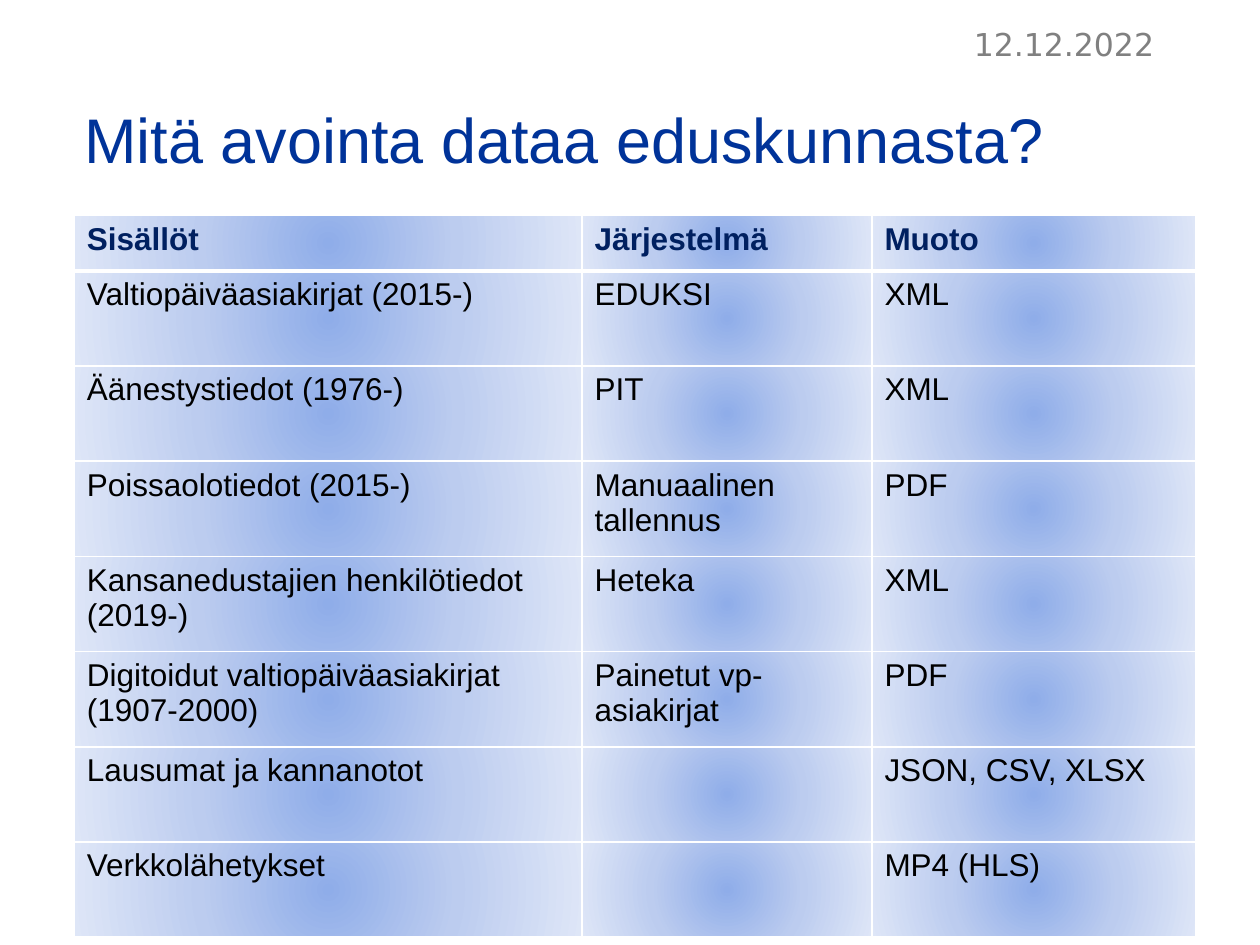
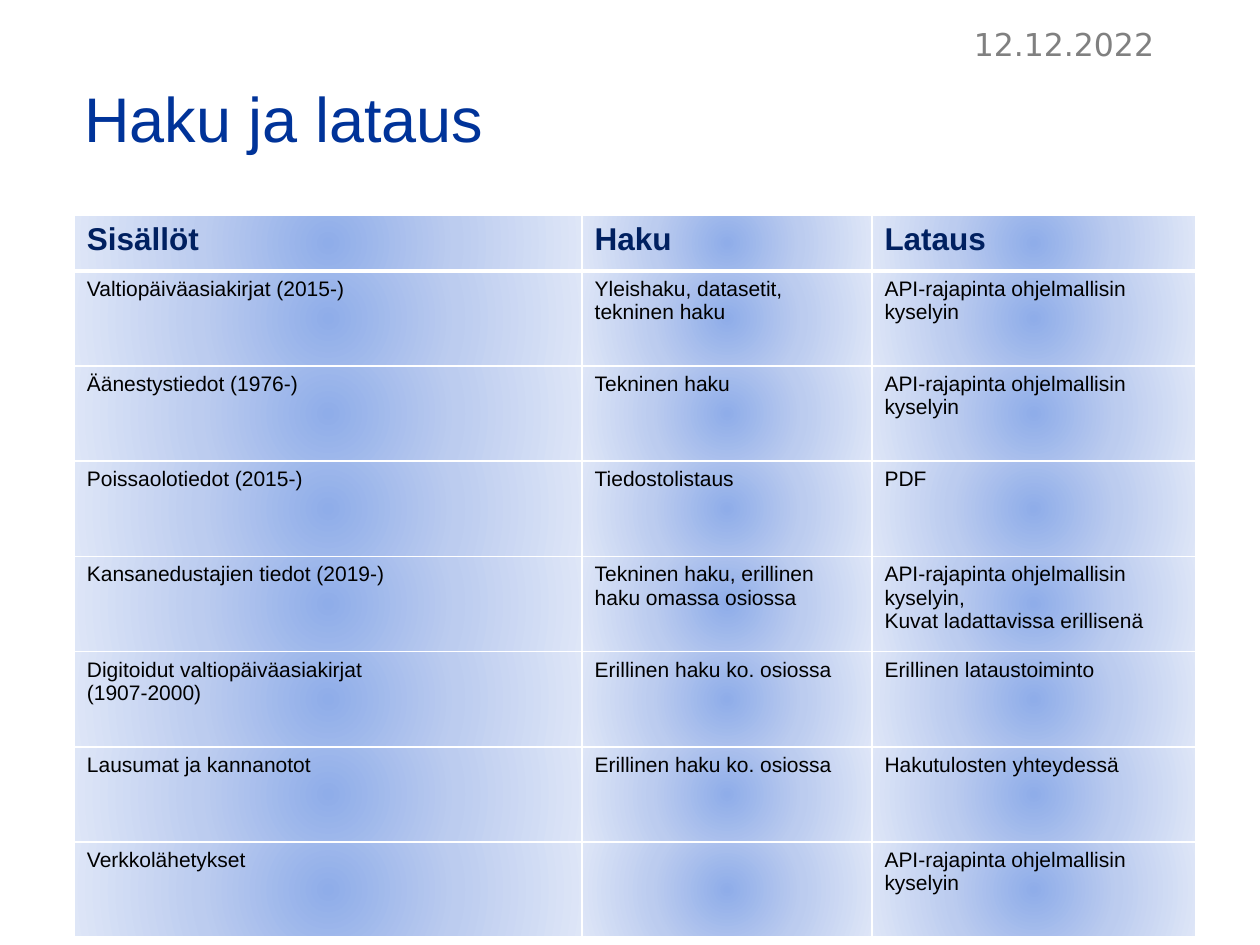
import pptx
import pptx.dml.color
import pptx.enum.text
import pptx.oxml
import pptx.oxml.ns
import pptx.util

Inches = pptx.util.Inches
Pt = pptx.util.Pt
RGBColor = pptx.dml.color.RGBColor
PP_ALIGN = pptx.enum.text.PP_ALIGN
qn = pptx.oxml.ns.qn

TITLE_BLUE = RGBColor(0x00, 0x33, 0x99)
HEADER_NAVY = RGBColor(0x00, 0x20, 0x60)
BODY_BLACK = RGBColor(0x00, 0x00, 0x00)
DATE_GRAY = RGBColor(0x80, 0x80, 0x80)
BORDER_WHITE = RGBColor(0xFF, 0xFF, 0xFF)
GRADIENT_STOPS = [
    (0, RGBColor(0x8F, 0xAD, 0xE9)),
    (50, RGBColor(0xBC, 0xCC, 0xEF)),
    (100, RGBColor(0xDE, 0xE6, 0xF7)),
]

DATE = "12.12.2022"
PLAIN_TABLE_STYLE = "{2D5ABB26-0587-4C30-8999-92F81FD0307C}"
COLUMN_WIDTHS = [4.03, 2.3, 2.57]
TABLE_HEIGHT = 5.73
HEADER_HEIGHT = 0.44
API_QUERY = "API-rajapinta ohjelmallisin kyselyin"

# Title, title height, body text size, table rows
SLIDES = [
    ("Mitä avointa dataa eduskunnasta?", 0.82, 18, [
        ("Sisällöt", "Järjestelmä", "Muoto"),
        ("Valtiopäiväasiakirjat (2015-)", "EDUKSI", "XML"),
        ("Äänestystiedot (1976-)", "PIT", "XML"),
        ("Poissaolotiedot (2015-)", "Manuaalinen tallennus", "PDF"),
        ("Kansanedustajien henkilötiedot (2019-)", "Heteka", "XML"),
        ("Digitoidut valtiopäiväasiakirjat\n(1907-2000)", "Painetut vp-asiakirjat", "PDF"),
        ("Lausumat ja kannanotot", "", "JSON, CSV, XLSX"),
        ("Verkkolähetykset", "", "MP4 (HLS)"),
    ]),
    ("Haku ja lataus", 0.65, 12, [
        ("Sisällöt", "Haku", "Lataus"),
        ("Valtiopäiväasiakirjat (2015-)", "Yleishaku, datasetit, tekninen haku", API_QUERY),
        ("Äänestystiedot (1976-)", "Tekninen haku", API_QUERY),
        ("Poissaolotiedot (2015-)", "Tiedostolistaus", "PDF"),
        ("Kansanedustajien tiedot (2019-)", "Tekninen haku, erillinen haku omassa osiossa",
         API_QUERY + ",\nKuvat ladattavissa erillisenä"),
        ("Digitoidut valtiopäiväasiakirjat\n(1907-2000)", "Erillinen haku ko. osiossa",
         "Erillinen lataustoiminto"),
        ("Lausumat ja kannanotot", "Erillinen haku ko. osiossa", "Hakutulosten yhteydessä"),
        ("Verkkolähetykset", "", API_QUERY),
    ]),
]


def add_text(slide, text, left, top, width, height, font_name, size, color, alignment):
    """Add a bottom-anchored text box without insets."""
    box = slide.shapes.add_textbox(Inches(left), Inches(top), Inches(width), Inches(height))
    frame = box.text_frame
    frame.word_wrap = True
    frame.vertical_anchor = pptx.enum.text.MSO_ANCHOR.BOTTOM
    frame.margin_left = frame.margin_top = frame.margin_right = frame.margin_bottom = 0
    paragraph = frame.paragraphs[0]
    paragraph.text = text
    paragraph.alignment = alignment
    paragraph.font.name = font_name
    paragraph.font.size = Pt(size)
    paragraph.font.color.rgb = color


def style_cell(cell, top_width, bottom_width):
    """Give a cell white borders and a radial gradient fill."""
    properties = cell._tc.get_or_add_tcPr()
    namespace = pptx.oxml.ns.nsdecls("a")
    for side, width in (("L", 1), ("R", 1), ("T", top_width), ("B", bottom_width)):
        properties.append(pptx.oxml.parse_xml(
            f'<a:ln{side} {namespace} w="{Pt(width)}"><a:solidFill>'
            f'<a:srgbClr val="{BORDER_WHITE}"/></a:solidFill></a:ln{side}>'))
    stops = "".join(
        f'<a:gs pos="{position * 1000}"><a:srgbClr val="{color}"/></a:gs>'
        for position, color in GRADIENT_STOPS)
    properties.append(pptx.oxml.parse_xml(
        f'<a:gradFill {namespace} rotWithShape="1"><a:gsLst>{stops}</a:gsLst>'
        '<a:path path="circle"><a:fillToRect l="50000" t="50000" r="50000" b="50000"/>'
        '</a:path></a:gradFill>'))


presentation = pptx.Presentation()
presentation.slide_width = Inches(10)
presentation.slide_height = Inches(7.5)

for title, title_height, body_size, rows in SLIDES:
    slide = presentation.slides.add_slide(presentation.slide_layouts[6])
    add_text(slide, DATE, 7.08, 0, 2.08, 0.5, "DejaVu Sans", 18, DATE_GRAY, PP_ALIGN.RIGHT)
    add_text(slide, title, 0.67, 0.58, 8.5, title_height, "Arial", 36, TITLE_BLUE, PP_ALIGN.LEFT)

    table = slide.shapes.add_table(
        len(rows), len(COLUMN_WIDTHS), Inches(0.59), Inches(1.71),
        Inches(sum(COLUMN_WIDTHS)), Inches(TABLE_HEIGHT)).table
    table.horz_banding = False
    table._tbl.tblPr.find(qn("a:tableStyleId")).text = PLAIN_TABLE_STYLE
    for column, width in zip(table.columns, COLUMN_WIDTHS):
        column.width = Inches(width)

    body_height = (TABLE_HEIGHT - HEADER_HEIGHT) / (len(rows) - 1)
    for row_index, texts in enumerate(rows):
        is_header = row_index == 0
        table.rows[row_index].height = Inches(HEADER_HEIGHT if is_header else body_height)
        for column_index, text in enumerate(texts):
            cell = table.cell(row_index, column_index)
            cell.text = text
            style_cell(cell, 3 if row_index == 1 else 1, 3 if is_header else 1)
            for paragraph in cell.text_frame.paragraphs:
                paragraph.font.name = "Arial"
                paragraph.font.size = Pt(18 if is_header else body_size)
                paragraph.font.bold = is_header
                paragraph.font.color.rgb = HEADER_NAVY if is_header else BODY_BLACK

presentation.save("out.pptx")
